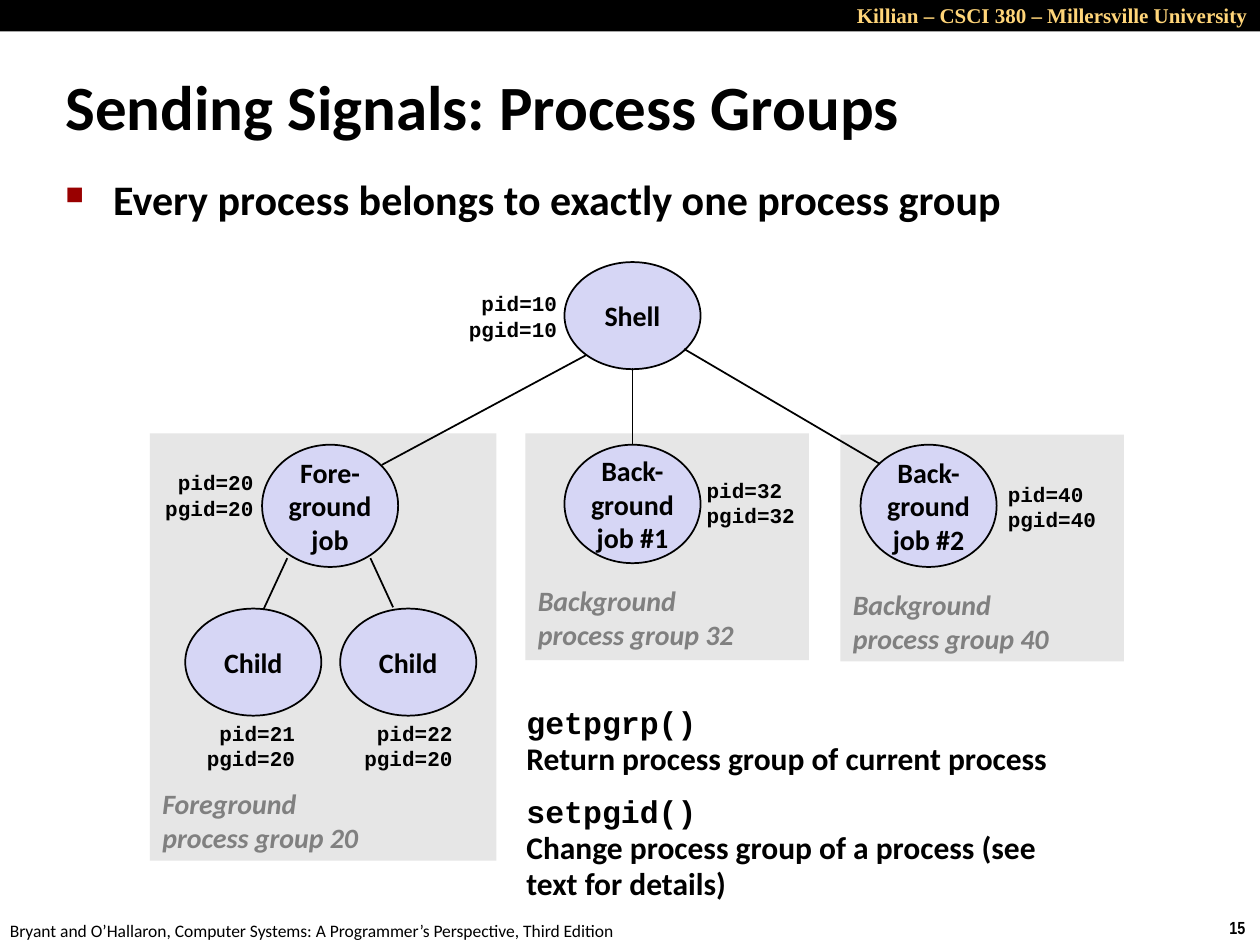
from lxml.etree import SubElement
from pptx import Presentation
from pptx.dml.color import RGBColor
from pptx.enum.shapes import MSO_CONNECTOR, MSO_SHAPE
from pptx.enum.text import MSO_ANCHOR, PP_ALIGN
from pptx.oxml.ns import qn
from pptx.util import Inches, Pt

BLACK, GOLD, RED = "000000", "FFD579", "990000"
GROUP_FILL, GROUP_TEXT, PROCESS_FILL = "E6E6E6", "808080", "D6D6F5"
SANS, MONO = "Calibri", "Courier New"
LEFT, CENTER, RIGHT = PP_ALIGN.LEFT, PP_ALIGN.CENTER, PP_ALIGN.RIGHT

HEADER = "Killian – CSCI 380 – Millersville University"
FOOTER = ("Bryant and O’Hallaron, Computer Systems: "
          "A Programmer’s Perspective, Third Edition")
PAGE_NUMBER = "15"
TITLE = "Sending Signals: Process Groups"
BULLET = "Every process belongs to exactly one process group"

# box, label, label box
GROUPS = [
    ((6.67, 3.45, 2.25, 1.8), "Background\nprocess group 40", (6.67, 4.61, 1.78, 0.64)),
    ((4.17, 3.44, 2.25, 1.8), "Background\nprocess group 32", (4.17, 4.58, 1.78, 0.64)),
    ((1.19, 3.44, 2.75, 3.39), "Foreground\nprocess group 20", (1.19, 6.19, 1.93, 0.64)),
]
# name, left, top, height, pid, pgid, left and top of the id label, its alignment
PROCESSES = [
    ("Fore-\nground\njob", 2.08, 3.53, 0.97, 20, 20, 1.2, 3.68, RIGHT),
    ("Back-\nground\njob #1", 4.48, 3.53, 0.94, 32, 32, 5.51, 3.74, LEFT),
    ("Back-\nground\njob #2", 6.83, 3.53, 0.97, 40, 40, 7.9, 3.77, LEFT),
    ("Shell", 4.48, 2.08, 0.85, 10, 10, 3.61, 2.26, RIGHT),
    ("Child", 1.47, 4.83, 0.85, 21, 20, 1.53, 5.67, RIGHT),
    ("Child", 2.7, 4.83, 0.85, 22, 20, 2.78, 5.67, RIGHT),
]
PROCESS_WIDTH = 1.08
LINKS = [
    (2.28, 4.43, 2.09, 4.84),
    (2.94, 4.43, 3.12, 4.82),
    (5.02, 2.92, 5.02, 3.53),
    (4.65, 2.82, 3.03, 3.69),
    (5.43, 2.77, 6.98, 3.68),
]
FUNCTIONS = [
    ("getpgrp()", "Return process group of current process"),
    ("setpgid()", "Change process group of a process (see text for details)"),
]


def rgb(color):
    return RGBColor.from_string(color)


def style_font(font, size, name=SANS, color=BLACK, bold=True, italic=False):
    font.size, font.name, font.bold, font.italic = Pt(size), name, bold, italic
    font.color.rgb = rgb(color)


def write(shape, text, size, align=LEFT, wrap=False, anchor=MSO_ANCHOR.MIDDLE, **style):
    """Fill a shape with one paragraph per line of text."""
    frame = shape.text_frame
    frame.text = text
    frame.word_wrap = wrap
    frame.vertical_anchor = anchor
    for paragraph in frame.paragraphs:
        paragraph.alignment = align
        for run in paragraph.runs:
            style_font(run.font, size, **style)


def add_text(slide, box, text, size, **options):
    shape = slide.shapes.add_textbox(*map(Inches, box))
    write(shape, text, size, **options)
    return shape


def add_filled(slide, kind, box, fill, outlined=False):
    shape = slide.shapes.add_shape(kind, *map(Inches, box))
    shape.shadow.inherit = False
    shape.fill.solid()
    shape.fill.fore_color.rgb = rgb(fill)
    if outlined:
        shape.line.color.rgb = rgb(BLACK)
        shape.line.width = Pt(1)
    else:
        shape.line.fill.background()
    return shape


def add_link(slide, ends):
    link = slide.shapes.add_connector(MSO_CONNECTOR.STRAIGHT, *map(Inches, ends))
    link.line.color.rgb = rgb(BLACK)
    link.line.width = Pt(1)
    SubElement(link._element.spPr, qn("a:effectLst"))


def add_bullet(paragraph, indent):
    properties = paragraph._p.get_or_add_pPr()
    properties.set("marL", str(Inches(indent)))
    properties.set("indent", str(-Inches(indent)))
    color = SubElement(properties, qn("a:buClr"))
    SubElement(color, qn("a:srgbClr"), val=RED)
    SubElement(properties, qn("a:buSzPct"), val="60000")
    SubElement(properties, qn("a:buChar"), char="■")


def add_functions(slide, box):
    frame = slide.shapes.add_textbox(*map(Inches, box)).text_frame
    frame.word_wrap = True
    for index, (name, purpose) in enumerate(FUNCTIONS):
        paragraph = frame.add_paragraph() if index else frame.paragraphs[0]
        paragraph.line_spacing = 0.95
        paragraph.space_before = Pt(10 if index else 0)
        run = paragraph.add_run()
        run.text = name
        style_font(run.font, 18, MONO)
        paragraph.add_line_break()
        run = paragraph.add_run()
        run.text = purpose
        style_font(run.font, 18)


def main():
    presentation = Presentation()
    presentation.slide_width, presentation.slide_height = Inches(10), Inches(7.5)
    slide = presentation.slides.add_slide(presentation.slide_layouts[6])

    add_filled(slide, MSO_SHAPE.RECTANGLE, (0, 0, 10, 0.25), BLACK)
    add_text(slide, (6.58, -0.03, 3.42, 0.3), HEADER, 12, align=RIGHT, wrap=True,
             anchor=MSO_ANCHOR.TOP, name="Times New Roman", color=GOLD)
    add_text(slide, (9.66, 7.23, 0.34, 0.27), PAGE_NUMBER, 10,
             anchor=MSO_ANCHOR.TOP, name="Arial Narrow")
    add_text(slide, (-0.02, 7.25, 5.08, 0.27), FOOTER, 10,
             anchor=MSO_ANCHOR.TOP, bold=False)
    add_text(slide, (0.42, 0.42, 8.3, 0.83), TITLE, 36, wrap=True)
    bullet = add_text(slide, (0.42, 1.33, 8.44, 0.67), BULLET, 24, wrap=True,
                      anchor=MSO_ANCHOR.TOP)
    add_bullet(bullet.text_frame.paragraphs[0], 0.38)

    for box, _, _ in GROUPS:
        add_filled(slide, MSO_SHAPE.RECTANGLE, box, GROUP_FILL)
    for name, left, top, height, *_ in PROCESSES:
        process = add_filled(slide, MSO_SHAPE.OVAL, (left, top, PROCESS_WIDTH, height),
                             PROCESS_FILL, outlined=True)
        write(process, name, 16, align=CENTER)
    for ends in LINKS:
        add_link(slide, ends)
    for _, label, label_box in GROUPS:
        add_text(slide, label_box, label, 16, color=GROUP_TEXT, italic=True)
    for *_, pid, pgid, left, top, align in PROCESSES:
        add_text(slide, (left, top, 0.91, 0.5), f"pid={pid}\npgid={pgid}", 12,
                 align=align, name=MONO)
    add_functions(slide, (4.08, 5.55, 4.5, 1.7))

    presentation.save("out.pptx")


if __name__ == "__main__":
    main()
